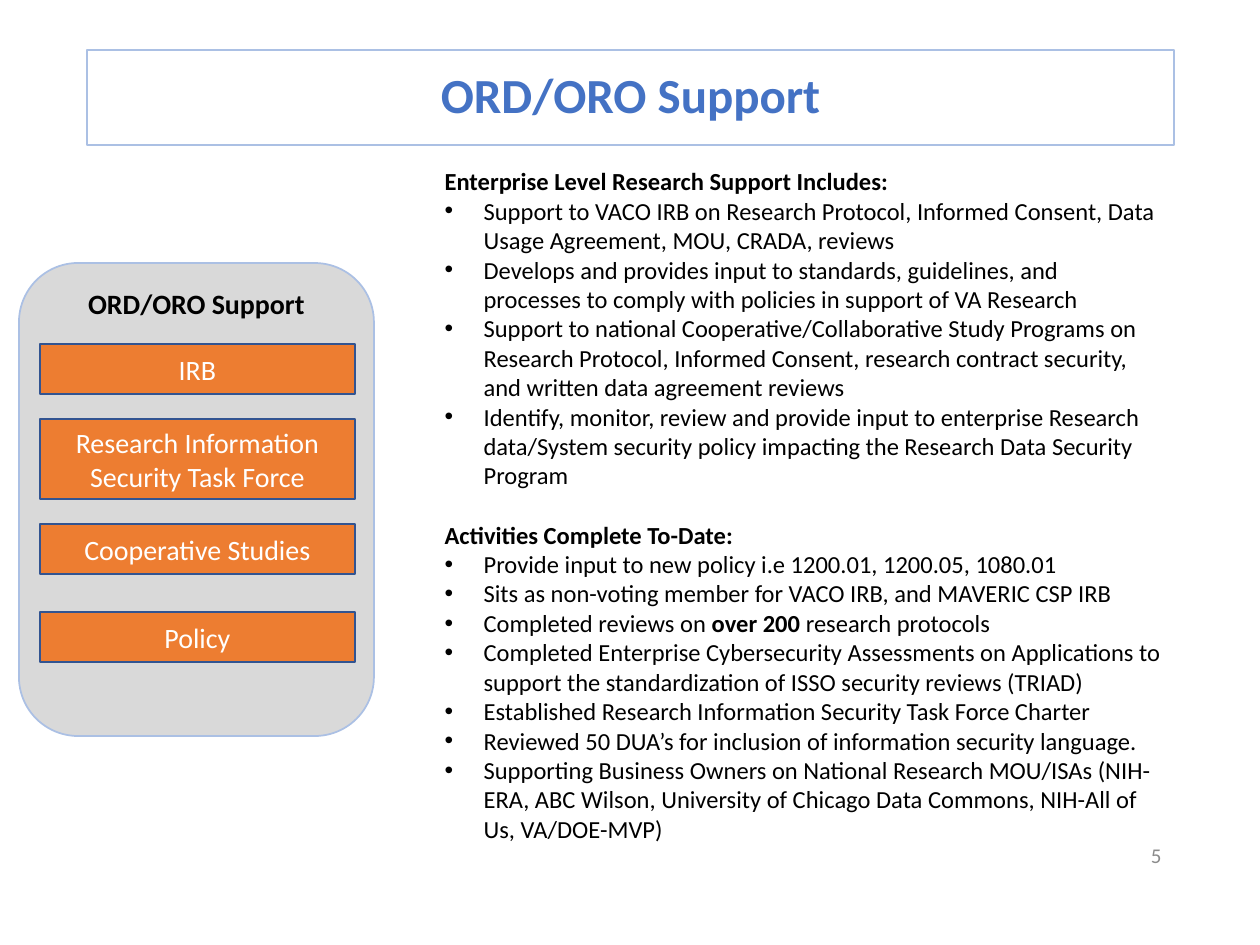
from typing import NamedTuple

from lxml.etree import SubElement
from pptx import Presentation
from pptx.dml.color import RGBColor
from pptx.enum.shapes import MSO_SHAPE
from pptx.enum.text import MSO_ANCHOR, MSO_AUTO_SIZE, PP_ALIGN
from pptx.oxml.ns import qn
from pptx.util import Emu, Pt

SCALE = 914400 / 126
INDENT = 39


class Box(NamedTuple):
    left: int
    top: int
    width: int
    height: int


class Task(NamedTuple):
    text: str
    top: int
    height: int = 50


class Part(NamedTuple):
    head: str
    items: list[str]


TASKS = [
    Task("IRB", 344),
    Task("Research Information Security Task Force", 419, 80),
    Task("Cooperative Studies", 524),
    Task("Policy", 612),
]

# Text between asterisks is bold.
PARTS = [
    Part("Enterprise Level Research Support Includes:", [
        "Support to VACO IRB on Research Protocol, Informed Consent, Data "
        "Usage Agreement, MOU, CRADA, reviews",
        "Develops and provides input to standards, guidelines, and processes "
        "to comply with policies in support of VA Research",
        "Support to national Cooperative/Collaborative Study Programs on "
        "Research Protocol, Informed Consent, research contract security, "
        "and written data agreement reviews",
        "Identify, monitor, review and provide input to enterprise Research "
        "data/System security policy impacting the Research Data Security "
        "Program",
    ]),
    Part("Activities Complete To-Date:", [
        "Provide input to new policy i.e 1200.01, 1200.05, 1080.01",
        "Sits as non-voting member for VACO IRB, and MAVERIC CSP IRB",
        "Completed reviews on *over 200 *research protocols",
        "Completed Enterprise Cybersecurity Assessments on Applications to "
        "support the standardization of ISSO security reviews (TRIAD)",
        "Established Research Information Security Task Force Charter",
        "Reviewed 50 DUA’s for inclusion of information security language.",
        "Supporting Business Owners on National Research MOU/ISAs (NIH-ERA, "
        "ABC Wilson, University of Chicago Data Commons, NIH-All of Us, "
        "VA/DOE-MVP)",
    ]),
]


def px(n: int) -> Emu:
    return Emu(round(n * SCALE))


def tint(code: str) -> RGBColor:
    return RGBColor.from_string(code)


def place(shape, box: Box) -> None:
    shape.left, shape.top, shape.width, shape.height = map(px, box)


def style(para, size: int, color: str, bold: bool | None = None,
          align=None) -> None:
    para.alignment = align
    font = para.font
    font.name, font.size, font.bold = "Calibri", Pt(size), bold
    font.color.rgb = tint(color)


def edge(shape, color: str, width: float) -> None:
    shape.line.color.rgb = tint(color)
    shape.line.width = Pt(width)


def block(slide, kind, box: Box, fill: str, line: str):
    """Add a filled shape and return its text frame."""
    shape = slide.shapes.add_shape(kind, *map(px, box))
    shape.shadow.inherit = False
    shape.fill.solid()
    shape.fill.fore_color.rgb = tint(fill)
    edge(shape, line, 1)
    shape.text_frame.word_wrap = True
    return shape.text_frame


def add_title(slide) -> None:
    title = slide.shapes.title
    place(title, Box(87, 50, 1087, 95))
    edge(title, "ABC0E4", 0.75)
    frame = title.text_frame
    frame.text = "ORD/ORO Support"
    frame.auto_size = MSO_AUTO_SIZE.NONE
    frame.vertical_anchor = MSO_ANCHOR.MIDDLE
    para = frame.paragraphs[0]
    para.line_spacing = 0.9
    style(para, 28, "4472C4", True, PP_ALIGN.CENTER)


def add_panel(slide) -> None:
    frame = block(slide, MSO_SHAPE.ROUNDED_RECTANGLE,
                  Box(19, 263, 355, 473), "D9D9D9", "ABC0E4")
    frame.text = "ORD/ORO Support"
    frame.vertical_anchor = MSO_ANCHOR.TOP
    style(frame.paragraphs[0], 16, "000000", True, PP_ALIGN.CENTER)
    for task in TASKS:
        frame = block(slide, MSO_SHAPE.RECTANGLE,
                      Box(40, task.top, 315, task.height), "ED7D31", "325491")
        frame.text = task.text
        frame.vertical_anchor = MSO_ANCHOR.MIDDLE
        style(frame.paragraphs[0], 16, "FFFFFF", align=PP_ALIGN.CENTER)


def add_para(frame, text: str, head: bool, gap: int) -> None:
    first = frame.paragraphs[0]
    para = frame.add_paragraph() if first.runs else first
    for i, piece in enumerate(text.split("*")):
        run = para.add_run()
        run.text = piece
        if i % 2:
            run.font.bold = True
    para.space_before = Pt(gap)
    props = para._p.get_or_add_pPr()
    indent = 0 if head else px(INDENT)
    props.set("marL", str(indent))
    props.set("indent", str(-indent))
    if head:
        SubElement(props, qn("a:buNone"))
    style(para, 14, "000000", head)


def add_body(slide) -> None:
    body = slide.placeholders[1]
    place(body, Box(432, 160, 742, 726))
    frame = body.text_frame
    frame.auto_size = MSO_AUTO_SIZE.NONE
    for i, part in enumerate(PARTS):
        add_para(frame, part.head, True, 17 if i else 0)
        for item in part.items:
            add_para(frame, item, False, 0)


def add_number(slide) -> None:
    box = slide.shapes.add_textbox(*map(px, Box(890, 830, 284, 50)))
    frame = box.text_frame
    frame.word_wrap = True
    frame.text = "5"
    frame.vertical_anchor = MSO_ANCHOR.MIDDLE
    style(frame.paragraphs[0], 12, "8C8C8C", align=PP_ALIGN.RIGHT)


def main() -> None:
    deck = Presentation()
    deck.slide_width, deck.slide_height = px(1260), px(945)
    slide = deck.slides.add_slide(deck.slide_layouts[1])
    add_number(slide)
    add_title(slide)
    add_panel(slide)
    add_body(slide)
    deck.save("out.pptx")


if __name__ == "__main__":
    main()
